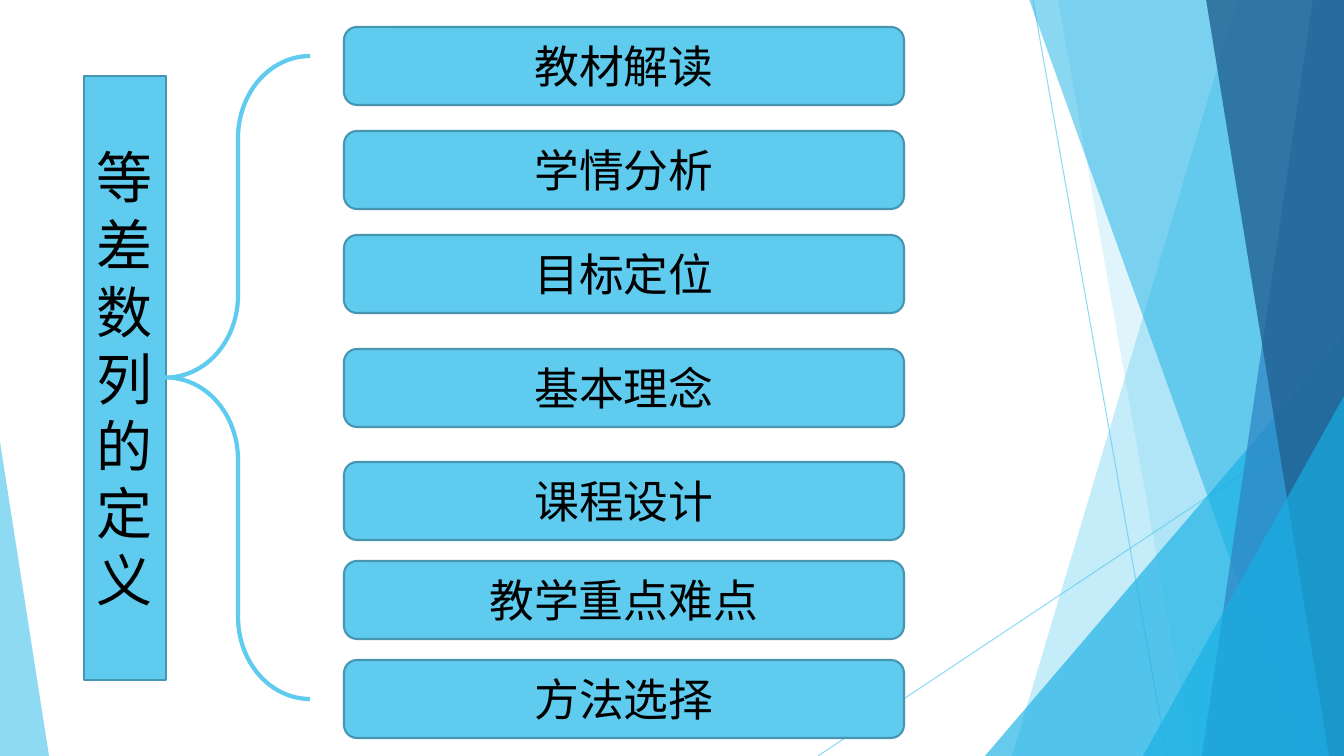
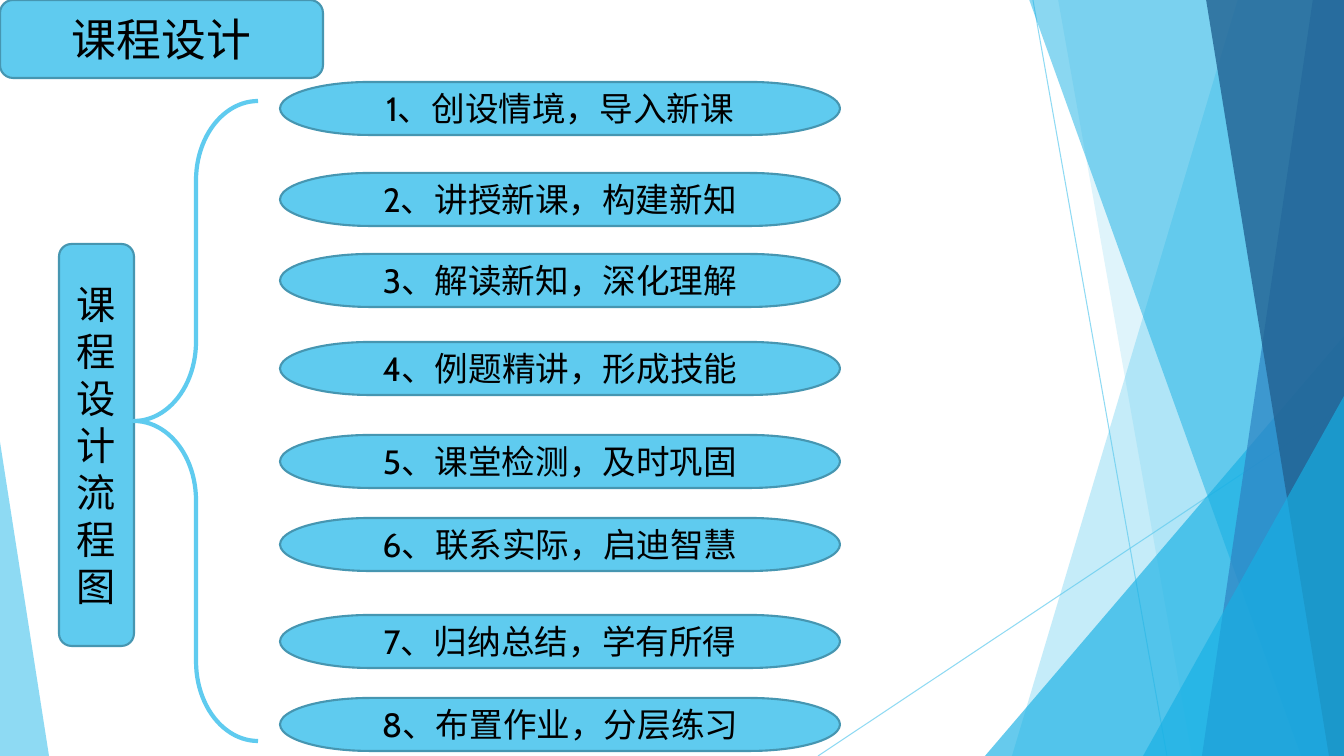
"""Build two bracket diagrams for a lesson on arithmetic sequences."""
from lxml import etree
from pptx import Presentation
from pptx.dml.color import RGBColor
from pptx.enum.shapes import MSO_CONNECTOR, MSO_SHAPE
from pptx.enum.text import MSO_ANCHOR, PP_ALIGN
from pptx.oxml.ns import qn
from pptx.util import Emu, Pt

WIDTH, HEIGHT = 1344, 756
SCALE = 12192000 / WIDTH

SKY = RGBColor(0x5F, 0xCB, 0xEF)
AZURE = RGBColor(0x17, 0xB0, 0xE4)
BLUE = RGBColor(0x2E, 0x83, 0xC3)
NAVY = RGBColor(0x22, 0x62, 0x92)
EDGE = RGBColor(0x46, 0x96, 0xB1)
BLACK = RGBColor(0, 0, 0)

STRAIGHT = MSO_CONNECTOR.STRAIGHT
RECTANGLE = MSO_SHAPE.RECTANGLE
ROUNDED = MSO_SHAPE.ROUNDED_RECTANGLE
PROCESS = MSO_SHAPE.FLOWCHART_ALTERNATE_PROCESS
TERMINATOR = MSO_SHAPE.FLOWCHART_TERMINATOR
TRIANGLE = MSO_SHAPE.ISOSCELES_TRIANGLE
BRACE = MSO_SHAPE.LEFT_BRACE
CENTER = PP_ALIGN.CENTER
MIDDLE = MSO_ANCHOR.MIDDLE

RAYS = [(1033, 0, 1167, HEIGHT), (WIDTH, 406, 818, HEIGHT)]
BACK_BANDS = [(1238, 1012, SKY, 36), (1058, 1192, SKY, 20)]
FRONT_BANDS = [(1029, 1301, AZURE, 50), (1313, 1202, BLUE, 70), (1206, 1329, NAVY, 80)]

TOPICS = [
    ("教材解读", 27), ("学情分析", 131), ("目标定位", 235), ("基本理念", 349),
    ("课程设计", 462), ("教学重点难点", 561), ("方法选择", 660),
]
STEPS = [
    ("创设情境，导入新课", 82), ("讲授新课，构建新知", 173),
    ("解读新知，深化理解", 254), ("例题精讲，形成技能", 342),
    ("课堂检测，及时巩固", 435), ("联系实际，启迪智慧", 518),
    ("归纳总结，学有所得", 615), ("布置作业，分层练习", 698),
]


def px(*lengths):
    return [Emu(round(length * SCALE)) for length in lengths]


def set_opacity(shape, percent):
    color = shape._element.spPr.find(".//" + qn("a:srgbClr"))
    etree.SubElement(color, qn("a:alpha"), val=str(percent * 1000))


class Deck:
    def __init__(self):
        self.presentation = Presentation()
        self.presentation.slide_width, self.presentation.slide_height = px(WIDTH, HEIGHT)
        self.slide = None

    def add_slide(self):
        self.slide = self.presentation.slides.add_slide(self.presentation.slide_layouts[6])
        for ray in RAYS:
            self.ray(*ray)
        for band in BACK_BANDS:
            self.band(*band)
        self.triangle(985, 336, 359, 420, 1, AZURE, 66)
        for band in FRONT_BANDS:
            self.band(*band)
        self.triangle(1143, 396, 201, 360, 1, AZURE, 66)
        self.triangle(0, 442, 49, 314, 0, SKY, 70)

    def ray(self, *ends):
        connector = self.slide.shapes.add_connector(STRAIGHT, *px(*ends))
        connector.line.color.rgb = SKY
        connector.line.width = Pt(0.75)
        set_opacity(connector, 70)
        etree.SubElement(connector._element.spPr, qn("a:effectLst"))

    def tint(self, shape, color, opacity):
        shape.shadow.inherit = False
        shape.fill.solid()
        shape.fill.fore_color.rgb = color
        shape.line.fill.background()
        set_opacity(shape, opacity)

    def band(self, top_x, bottom_x, color, opacity):
        outline = self.slide.shapes.build_freeform(top_x, -1, scale=SCALE)
        outline.add_line_segments([(WIDTH, -1), (WIDTH, HEIGHT), (bottom_x, HEIGHT)], close=True)
        self.tint(outline.convert_to_shape(), color, opacity)

    def triangle(self, left, top, width, height, apex, color, opacity):
        shape = self.slide.shapes.add_shape(TRIANGLE, *px(left, top, width, height))
        shape.adjustments[0] = apex
        self.tint(shape, color, opacity)

    def brace(self, left, top, width, height, curve):
        shape = self.slide.shapes.add_shape(BRACE, *px(left, top, width, height))
        shape.adjustments[0] = curve
        shape.shadow.inherit = False
        shape.fill.background()
        shape.line.color.rgb = SKY
        shape.line.width = Pt(3)

    def box(self, kind, left, top, width, height, paragraphs, size):
        shape = self.slide.shapes.add_shape(kind, *px(left, top, width, height))
        shape.shadow.inherit = False
        shape.fill.solid()
        shape.fill.fore_color.rgb = SKY
        shape.line.color.rgb = EDGE
        shape.line.width = Pt(1.5)
        frame = shape.text_frame
        frame.text = "\n".join(paragraphs)
        frame.vertical_anchor = MIDDLE
        for paragraph in frame.paragraphs:
            paragraph.alignment = CENTER
            font = paragraph.runs[0].font
            for name, value in {"name": "Cabin", "size": Pt(size)}.items():
                setattr(font, name, value)
            font.color.rgb = BLACK


def main():
    deck = Deck()

    deck.add_slide()
    deck.box(RECTANGLE, 84, 76, 82, 604, list("等差数列的定义"), 40)
    deck.brace(166, 56, 144, 643, 0.57)
    for topic, top in TOPICS:
        deck.box(ROUNDED, 344, top, 560, 78, [topic], 32)

    deck.add_slide()
    deck.box(PROCESS, 59, 244, 75, 402, ["课程设计流程图"], 28)
    deck.brace(134, 101, 124, 640, 0.64)
    deck.box(ROUNDED, 0, 0, 323, 78, ["课程设计"], 32)
    for number, (step, top) in enumerate(STEPS, 1):
        deck.box(TERMINATOR, 280, top, 560, 53, [f"{number}、{step}"], 24)

    deck.presentation.save("out.pptx")


if __name__ == "__main__":
    main()
